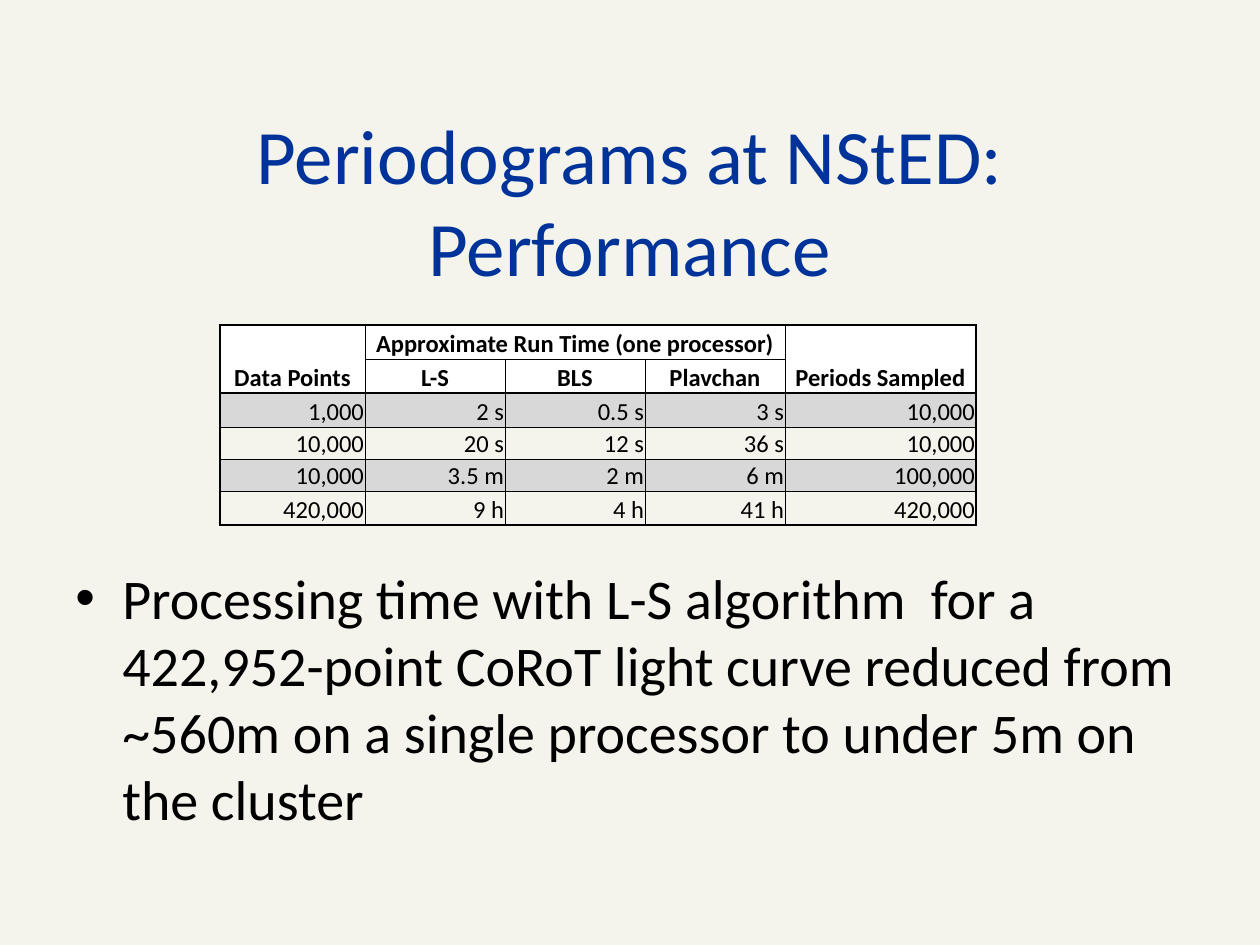
from dataclasses import dataclass

from lxml import etree
from pptx import Presentation, util as u
from pptx.dml.color import RGBColor
from pptx.enum import text
from pptx.oxml.ns import qn


@dataclass(frozen=True)
class Theme:
    font: str = "Calibri"
    background: str = "F4F3EC"
    title: str = "003399"
    ink: str = "000000"
    header: str = "FFFFFF"
    band: str = "D8D8D8"
    title_size: int = 44
    body_size: int = 32
    table_size: int = 14
    thin: float = 0.5
    thick: float = 1.5


THEME = Theme()
COLUMNS = [145, 140, 140, 140, 191]
ROWS = [34, 34, 34, 32, 32, 34]
HEADER_ROWS = 2
VALUES = [
    ["Data Points", "Approximate Run Time (one processor)", "", "", "Periods Sampled"],
    ["", "L-S", "BLS", "Plavchan", ""],
    ["1,000", "2 s", "0.5 s", "3 s", "10,000"],
    ["10,000", "20 s", "12 s", "36 s", "10,000"],
    ["10,000", "3.5 m", "2 m", "6 m", "100,000"],
    ["420,000", "9 h", "4 h", "41 h", "420,000"],
]
MERGES = [((0, 0), (1, 0)), ((0, 1), (0, 3)), ((0, 4), (1, 4))]
THICK_ROW_LINES = {0, HEADER_ROWS, len(ROWS)}
THICK_COLUMN_LINES = {0, len(COLUMNS)}


def px(length):
    return u.Emu(round(length * 914400 / 126))


def place(shape, left, top, width, height):
    shape.left, shape.top = px(left), px(top)
    shape.width, shape.height = px(width), px(height)


def format_text(paragraph, size, color, bold=False):
    for run in paragraph.runs:
        run.font.name = THEME.font
        run.font.size = u.Pt(size)
        run.font.bold = bold
        run.font.color.rgb = RGBColor.from_string(color)


def set_title(slide, words):
    title = slide.shapes.title
    place(title, 63, 147, 1134, 105)
    frame = title.text_frame
    frame.text = words
    frame.word_wrap = True
    frame.auto_size = text.MSO_AUTO_SIZE.NONE
    frame.vertical_anchor = text.MSO_ANCHOR.MIDDLE
    frame.paragraphs[0].alignment = text.PP_ALIGN.CENTER
    format_text(frame.paragraphs[0], THEME.title_size, THEME.title)


def add_bullet(slide, words):
    box = slide.shapes.add_textbox(px(63), px(557), px(1134), px(273))
    frame = box.text_frame
    frame.word_wrap = True
    frame.text = words
    paragraph = frame.paragraphs[0]
    properties = paragraph._p.get_or_add_pPr()
    properties.set("marL", str(px(47)))
    properties.set("indent", str(-px(47)))
    etree.SubElement(properties, qn("a:buFont"), typeface="Arial")
    etree.SubElement(properties, qn("a:buChar"), char="•")
    format_text(paragraph, THEME.body_size, THEME.ink)


def set_borders(cell, row, column):
    edges = {
        "a:lnL": column in THICK_COLUMN_LINES,
        "a:lnR": column + cell.span_width in THICK_COLUMN_LINES,
        "a:lnT": row in THICK_ROW_LINES,
        "a:lnB": row + cell.span_height in THICK_ROW_LINES,
    }
    properties = cell._tc.get_or_add_tcPr()
    for tag, is_thick in edges.items():
        width = u.Pt(THEME.thick if is_thick else THEME.thin)
        line = etree.SubElement(properties, qn(tag), w=str(width))
        fill = etree.SubElement(line, qn("a:solidFill"))
        etree.SubElement(fill, qn("a:srgbClr"), val=THEME.ink)


def set_fill(cell, row):
    if row >= HEADER_ROWS and row % 2:
        cell.fill.background()
        return
    cell.fill.solid()
    color = THEME.header if row < HEADER_ROWS else THEME.band
    cell.fill.fore_color.rgb = RGBColor.from_string(color)


def fill_cell(cell, row, column):
    is_header = row < HEADER_ROWS
    cell.margin_left = cell.margin_right = cell.margin_top = px(1)
    cell.margin_bottom = 0
    cell.vertical_anchor = text.MSO_ANCHOR.BOTTOM
    cell.text_frame.text = VALUES[row][column]
    paragraph = cell.text_frame.paragraphs[0]
    paragraph.alignment = text.PP_ALIGN.CENTER if is_header else text.PP_ALIGN.RIGHT
    format_text(paragraph, THEME.table_size, THEME.ink, is_header)
    set_borders(cell, row, column)
    set_fill(cell, row)


def add_run_times(slide):
    frame = slide.shapes.add_table(
        len(ROWS), len(COLUMNS), px(220), px(325), px(sum(COLUMNS)), px(sum(ROWS)))
    table = frame.table
    table.first_row = table.horz_banding = False
    for column, width in zip(table.columns, COLUMNS):
        column.width = px(width)
    for row, height in zip(table.rows, ROWS):
        row.height = px(height)
    for first, last in MERGES:
        table.cell(*first).merge(table.cell(*last))
    for row in range(len(ROWS)):
        for column in range(len(COLUMNS)):
            cell = table.cell(row, column)
            if not cell.is_spanned:
                fill_cell(cell, row, column)


def main():
    presentation = Presentation()
    presentation.slide_width, presentation.slide_height = px(1260), px(945)
    slide = presentation.slides.add_slide(presentation.slide_layouts[5])
    slide.background.fill.solid()
    slide.background.fill.fore_color.rgb = RGBColor.from_string(THEME.background)
    set_title(slide, "Periodograms at NStED: Performance")
    add_bullet(slide, "Processing time with L-S algorithm  for a 422,952-point CoRoT "
               "light curve reduced from ~560m on a single processor to under 5m on "
               "the cluster")
    add_run_times(slide)
    presentation.save("out.pptx")


if __name__ == "__main__":
    main()
